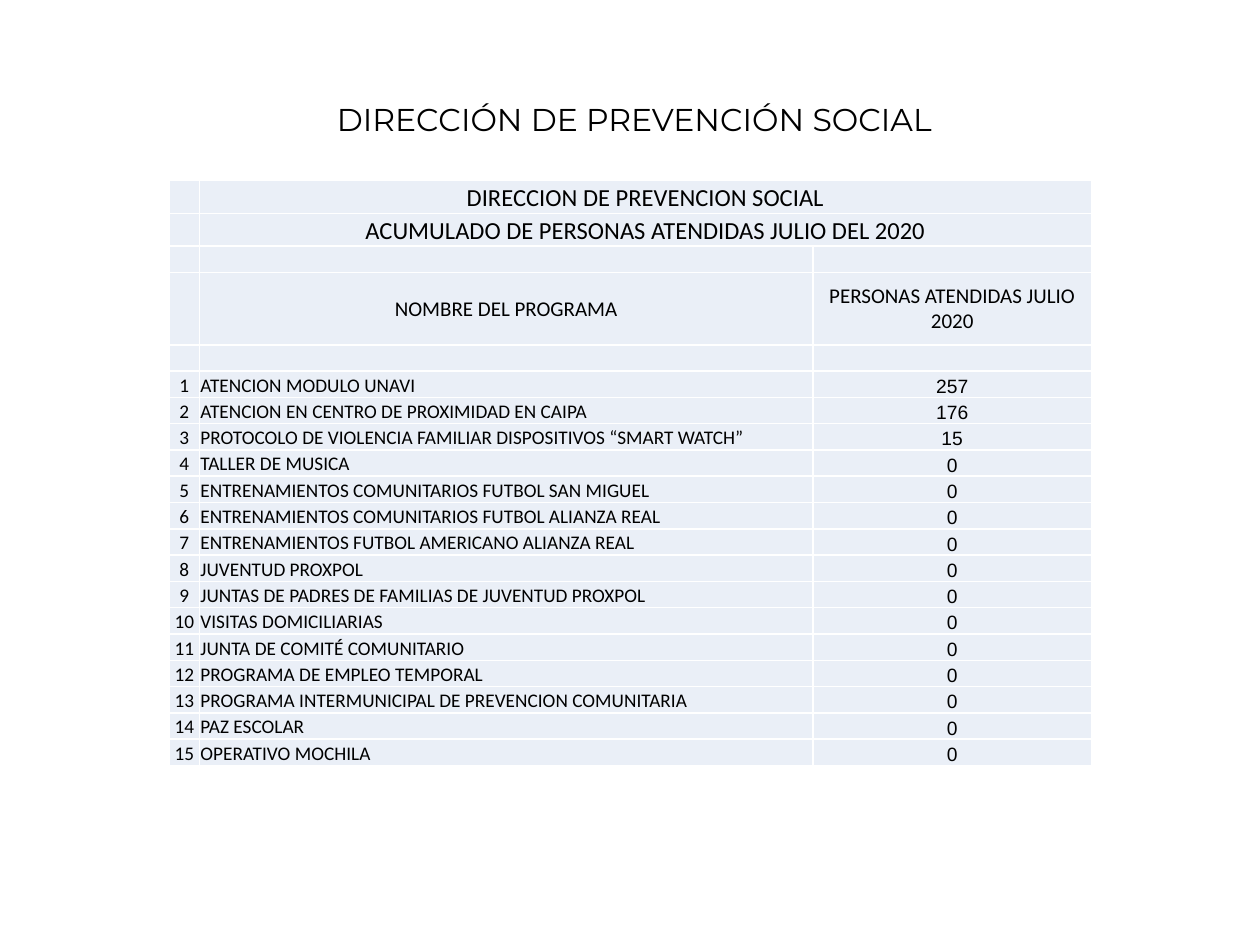
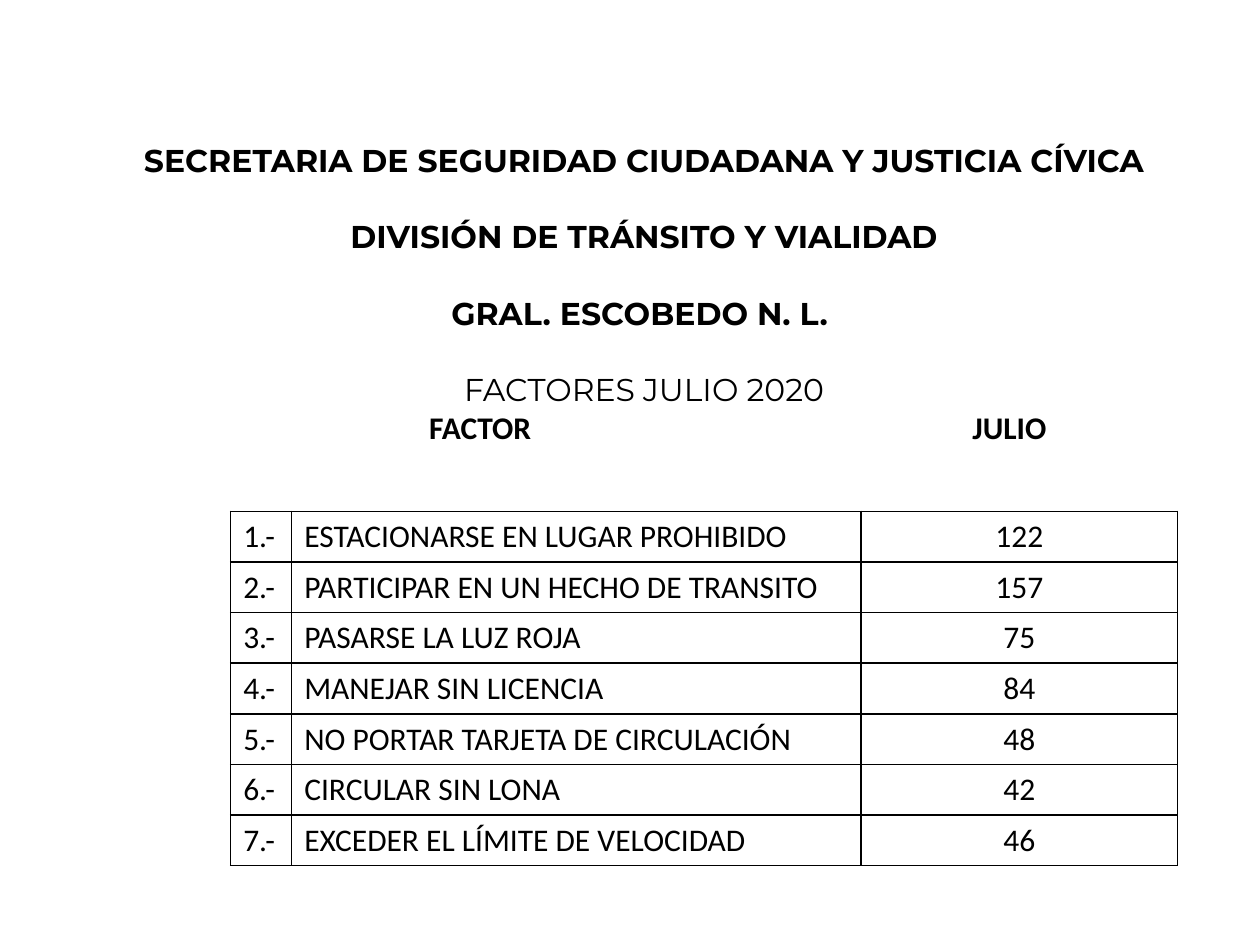
"""Build two slides of July 2020 figures for social prevention and traffic."""
import lxml.etree
import pptx
import pptx.dml.color
import pptx.enum.text
import pptx.oxml.ns
import pptx.util

Cm, Pt, qn = pptx.util.Cm, pptx.util.Pt, pptx.oxml.ns.qn
LEFT, CENTER = pptx.enum.text.PP_ALIGN.LEFT, pptx.enum.text.PP_ALIGN.CENTER
BOTTOM, MIDDLE = pptx.enum.text.MSO_ANCHOR.BOTTOM, pptx.enum.text.MSO_ANCHOR.MIDDLE
COLORS = {"text": "000000", "cell": "EAEFF7", "white": "FFFFFF"}


def set_font(p, name, size, bold=False):
    p.font.name, p.font.size, p.font.bold = name, Pt(size), bold
    p.font.color.rgb = pptx.dml.color.RGBColor.from_string(COLORS["text"])


def add_grid(s, left, top, widths, heights, rows, line, fill=None):
    table = s.shapes.add_table(len(rows), len(widths), Cm(left), Cm(top),
                               Cm(sum(widths)), Cm(sum(heights))).table
    table.first_row = table.horz_banding = False
    for column, width in zip(table.columns, widths):
        column.width = Cm(width)
    for row, height, texts in zip(table.rows, heights, rows):
        row.height = Cm(height)
        for cell, text in zip(row.cells, texts):
            cell.text = text
            tc_pr = cell._tc.get_or_add_tcPr()
            for side in ("a:lnL", "a:lnR", "a:lnT", "a:lnB"):
                ln = lxml.etree.SubElement(tc_pr, qn(side), w=str(Pt(1)))
                solid = lxml.etree.SubElement(ln, qn("a:solidFill"))
                lxml.etree.SubElement(solid, qn("a:srgbClr"), val=COLORS[line])
            if fill:
                cell.fill.solid()
                cell.fill.fore_color.rgb = pptx.dml.color.RGBColor.from_string(COLORS[fill])
            else:
                cell.fill.background()
    return table


prs = pptx.Presentation()
prs.slide_width, prs.slide_height = Cm(25.4), Cm(19.05)

headings = [
    ((4.09, 1.9, 17.4, 1.02), [("DIRECCIÓN DE PREVENCIÓN SOCIAL", False)]),
    ((2.24, 2.72, 21.49, 7.19), [
        ("SECRETARIA DE SEGURIDAD CIUDADANA Y JUSTICIA CÍVICA", True),
        ("DIVISIÓN DE TRÁNSITO Y VIALIDAD", True),
        ("GRAL. ESCOBEDO N. L. ", True),
        ("FACTORES JULIO 2020", False),
    ]),
]
for box, lines in headings:
    s = prs.slides.add_slide(prs.slide_layouts[6])
    tf = s.shapes.add_textbox(*map(Cm, box)).text_frame
    tf.word_wrap = True
    for i, (text, bold) in enumerate(lines):
        p = tf.add_paragraph() if i else tf.paragraphs[0]
        p.text = text
        p.alignment = CENTER
        p.space_before = Pt(22 if i else 0)
        set_font(p, "Montserrat", 18, bold)
prevention, traffic = prs.slides

p = tf.add_paragraph()
p.add_run().text = "\tFACTOR\tJULIO"
p.alignment = LEFT
tabs = lxml.etree.SubElement(p._p.get_or_add_pPr(), qn("a:tabLst"))
for position in (7.19, 17.86):
    lxml.etree.SubElement(tabs, qn("a:tab"), pos=str(Cm(position)), algn="ctr")
set_font(p, "Calibri", 18, True)

programs = [
    ("ATENCION MODULO UNAVI", 257),
    ("ATENCION EN CENTRO DE PROXIMIDAD EN CAIPA", 176),
    ("PROTOCOLO DE VIOLENCIA FAMILIAR DISPOSITIVOS “SMART WATCH”", 15),
    ("TALLER DE MUSICA", 0),
    ("ENTRENAMIENTOS COMUNITARIOS FUTBOL SAN MIGUEL", 0),
    ("ENTRENAMIENTOS COMUNITARIOS FUTBOL ALIANZA REAL", 0),
    ("ENTRENAMIENTOS FUTBOL AMERICANO ALIANZA REAL", 0),
    ("JUVENTUD PROXPOL", 0),
    ("JUNTAS DE PADRES DE FAMILIAS DE JUVENTUD PROXPOL", 0),
    ("VISITAS DOMICILIARIAS", 0),
    ("JUNTA DE COMITÉ COMUNITARIO", 0),
    ("PROGRAMA DE EMPLEO TEMPORAL", 0),
    ("PROGRAMA INTERMUNICIPAL DE PREVENCION COMUNITARIA", 0),
    ("PAZ ESCOLAR", 0),
    ("OPERATIVO MOCHILA", 0),
]
header = [
    ("", "DIRECCION DE PREVENCION SOCIAL", ""),
    ("", "ACUMULADO DE PERSONAS ATENDIDAS JULIO DEL 2020", ""),
    ("", "", ""),
    ("", "NOMBRE DEL PROGRAMA", "PERSONAS ATENDIDAS JULIO 2020"),
    ("", "", ""),
]
rows = header + [(str(n), name, str(count)) for n, (name, count) in enumerate(programs, 1)]
heights = [0.66, 0.66, 0.53, 1.46] + [0.53] * (len(rows) - 4)
sizes = [14, 14, 11, 12] + [11] * (len(rows) - 4)
table = add_grid(prevention, 3.41, 3.64, (0.61, 12.37, 5.61), heights, rows, "white", "cell")
for r, (row, size) in enumerate(zip(table.rows, sizes)):
    is_program = r >= len(header)
    for c, cell in enumerate(row.cells):
        cell.margin_left = cell.margin_right = cell.margin_top = Cm(0.02)
        cell.margin_bottom = 0
        cell.vertical_anchor = MIDDLE if r == 3 else BOTTOM
        p = cell.text_frame.paragraphs[0]
        p.alignment = LEFT if is_program and c == 1 else CENTER
        set_font(p, "Arial" if is_program and c == 2 else "Calibri", size)
        if not cell.text:
            lxml.etree.SubElement(p._p, qn("a:endParaRPr"), sz=str(size * 100))
for r in (0, 1):
    table.cell(r, 1).merge(table.cell(r, 2))

factors = [
    ("ESTACIONARSE EN LUGAR PROHIBIDO", 122),
    ("PARTICIPAR EN UN HECHO DE TRANSITO", 157),
    ("PASARSE LA LUZ ROJA", 75),
    ("MANEJAR SIN LICENCIA", 84),
    ("NO PORTAR TARJETA DE CIRCULACIÓN", 48),
    ("CIRCULAR SIN LONA", 42),
    ("EXCEDER EL LÍMITE DE VELOCIDAD", 46),
]
rows = [(f"{n}.-", name, str(count)) for n, (name, count) in enumerate(factors, 1)]
table = add_grid(traffic, 4.65, 10.31, (1.23, 11.48, 6.38), [1.02] * len(rows), rows, "text")
for row in table.rows:
    for cell, alignment in zip(row.cells, (LEFT, LEFT, CENTER)):
        p = cell.text_frame.paragraphs[0]
        p.alignment = alignment
        set_font(p, "Calibri", 18)

prs.save("out.pptx")
